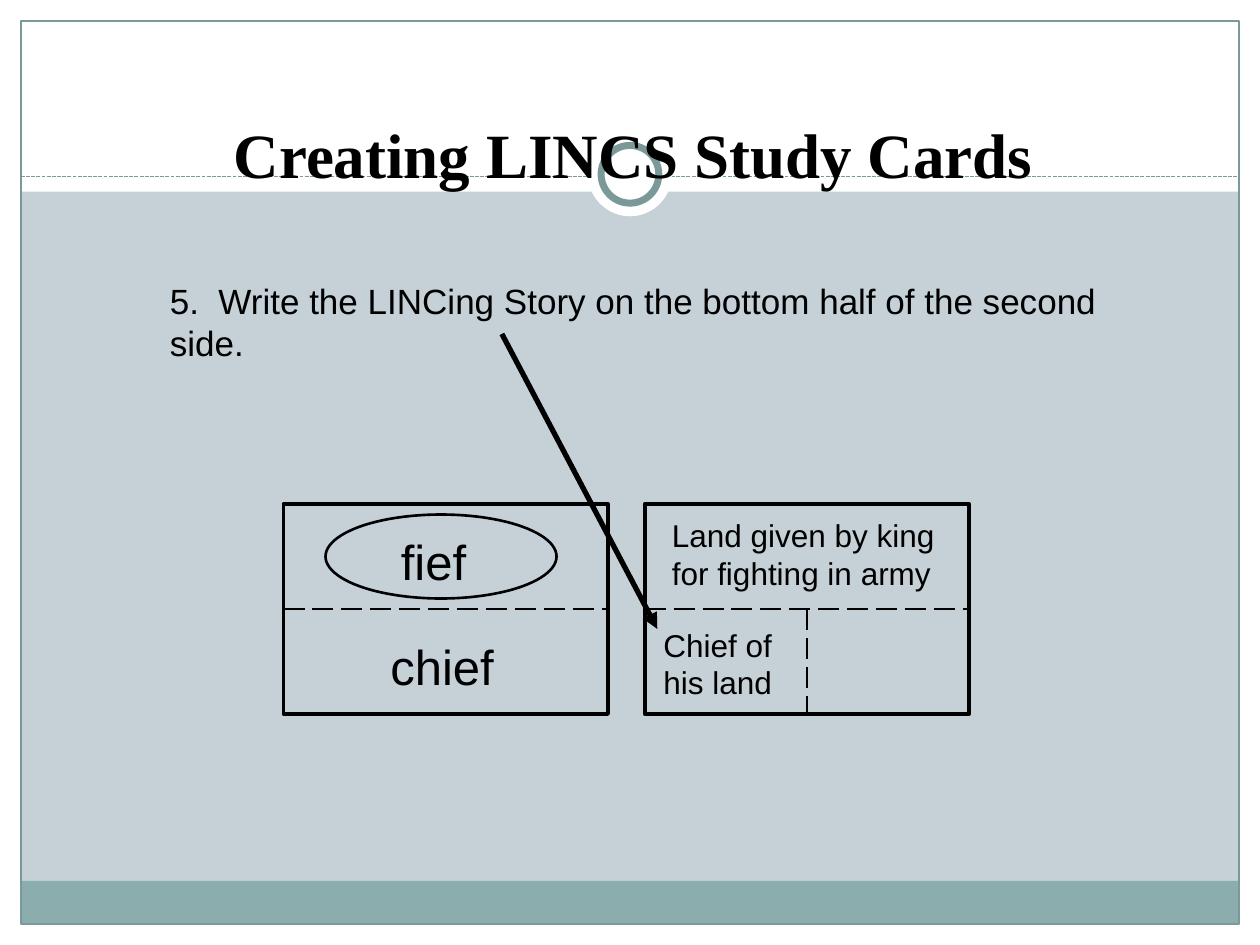
from dataclasses import dataclass

from lxml import etree
from pptx import Presentation
from pptx import util as u
from pptx.dml.color import RGBColor
from pptx.enum import dml, shapes, text
from pptx.oxml import ns

WIDTH, HEIGHT = u.Inches(10), u.Inches(7.5)
COLUMNS, ROWS = 120, 90
COLORS = {
    "background": "C5D1D7",
    "paper": "FFFFFF",
    "band": "8CADAE",
    "trim": "7C999A",
    "ink": "000000",
}
RECTANGLE = shapes.MSO_SHAPE.RECTANGLE
OVAL = shapes.MSO_SHAPE.OVAL
DASH = dml.MSO_LINE.LONG_DASH


@dataclass(frozen=True)
class Box:
    column: float
    row: float
    columns: float
    rows: float

    def lengths(self) -> tuple[int, int, int, int]:
        return x(self.column), y(self.row), x(self.columns), y(self.rows)


@dataclass(frozen=True)
class Panel:
    box: Box
    fill: str | None = None
    line: str | None = None
    weight: float = 0.75
    kind: int = RECTANGLE


@dataclass(frozen=True)
class Label:
    box: Box
    words: str
    size: float


def x(columns: float) -> int:
    return round(WIDTH * columns / COLUMNS)


def y(rows: float) -> int:
    return round(HEIGHT * rows / ROWS)


def color(name: str) -> RGBColor:
    return RGBColor.from_string(COLORS[name])


def add_panel(slide, panel: Panel):
    shape = slide.shapes.add_shape(panel.kind, *panel.box.lengths())
    shape.shadow.inherit = False
    if panel.fill:
        shape.fill.solid()
        shape.fill.fore_color.rgb = color(panel.fill)
    else:
        shape.fill.background()
    if panel.line:
        shape.line.color.rgb = color(panel.line)
        shape.line.width = u.Pt(panel.weight)
    else:
        shape.line.fill.background()
    return shape


def add_line(slide, start: tuple[float, float], end: tuple[float, float], *,
             line: str = "ink", weight: float = 1.5, dash=None, arrow: bool = False):
    connector = slide.shapes.add_connector(
        shapes.MSO_CONNECTOR.STRAIGHT, x(start[0]), y(start[1]), x(end[0]), y(end[1]))
    connector.line.color.rgb = color(line)
    connector.line.width = u.Pt(weight)
    if dash is not None:
        connector.line.dash_style = dash
    if arrow:
        outline = connector.line._get_or_add_ln()
        etree.SubElement(outline, ns.qn("a:tailEnd"), type="triangle")
    etree.SubElement(connector._element.spPr, ns.qn("a:effectLst"))
    return connector


def add_text(slide, box: Box, words: str, *, size: float, font: str = "Arial",
             bold: bool = False, align=text.PP_ALIGN.LEFT) -> None:
    frame = slide.shapes.add_textbox(*box.lengths()).text_frame
    frame.word_wrap = True
    frame.auto_size = text.MSO_AUTO_SIZE.SHAPE_TO_FIT_TEXT
    paragraph = frame.paragraphs[0]
    paragraph.alignment = align
    spacing = etree.SubElement(paragraph._p.get_or_add_pPr(), ns.qn("a:spcBef"))
    etree.SubElement(spacing, ns.qn("a:spcPct"), val="50000")
    run = paragraph.add_run()
    run.text = words
    run.font.name = font
    run.font.size = u.Pt(size)
    run.font.bold = bold
    run.font.color.rgb = color("ink")


def add_card(slide, box: Box):
    card = add_panel(slide, Panel(box, line="ink", weight=2.25))
    middle = box.row + box.rows / 2
    divider = add_line(slide, (box.column, middle), (box.column + box.columns, middle), dash=DASH)
    divider.begin_connect(card, 1)
    divider.end_connect(card, 3)
    return card


BACKDROP = [
    Panel(Box(0, 88, COLUMNS, 2), "paper"),
    Panel(Box(0, 0, COLUMNS, 18.25), "paper"),
    Panel(Box(0, 0, 2, ROWS), "paper"),
    Panel(Box(118, 0, 2, ROWS), "paper"),
    Panel(Box(2, 83.9, 116, 4.1), "band"),
    Panel(Box(2, 2, 116, 86), line="trim"),
]
RING = [
    Panel(Box(56, 12.6, 8, 8), "paper", kind=OVAL),
    Panel(Box(57.25, 13.85, 5.5, 5.5), "paper", "trim", 4, OVAL),
]
FRONT = Box(27, 48, 30.9, 20)
BACK = Box(61.4, 48, 30.9, 20)
WORD_OVAL = Panel(Box(31, 49, 22, 8), line="ink", weight=1.5, kind=OVAL)
LABELS = [
    Label(Box(15, 26, 97, 9.3),
          "5.  Write the LINCing Story on the bottom half of the second side.", 20),
    Label(Box(37, 50, 9.25, 6.8), "fief", 28),
    Label(Box(36, 60, 13, 6.8), "chief", 28),
    Label(Box(62.8, 48.6, 30.1, 8.4), "Land given by king for fighting in army", 18),
    Label(Box(62, 59, 16, 8.4), "Chief of his land", 18),
]


def main() -> None:
    presentation = Presentation()
    presentation.slide_width, presentation.slide_height = WIDTH, HEIGHT
    slide = presentation.slides.add_slide(presentation.slide_layouts[6])
    slide.background.fill.solid()
    slide.background.fill.fore_color.rgb = color("background")

    for panel in BACKDROP:
        add_panel(slide, panel)
    add_line(slide, (2, 16.8), (118, 16.8), line="trim", weight=0.75,
             dash=dml.MSO_LINE.SQUARE_DOT)
    for panel in RING:
        add_panel(slide, panel)
    add_text(slide, Box(19.7, 10.4, 81.2, 8.4), "Creating LINCS Study Cards", size=36,
             font="Times New Roman", bold=True, align=text.PP_ALIGN.CENTER)

    add_card(slide, FRONT)
    back = add_card(slide, BACK)
    center = BACK.column + BACK.columns / 2
    divider = add_line(slide, (center, BACK.row + BACK.rows / 2),
                       (center, BACK.row + BACK.rows), dash=DASH)
    divider.end_connect(back, 2)
    add_panel(slide, WORD_OVAL)
    for label in LABELS:
        add_text(slide, label.box, label.words, size=label.size)
    add_line(slide, (47.8, 31.8), (62.6, 59.9), weight=3, arrow=True)

    presentation.save("out.pptx")


if __name__ == "__main__":
    main()
